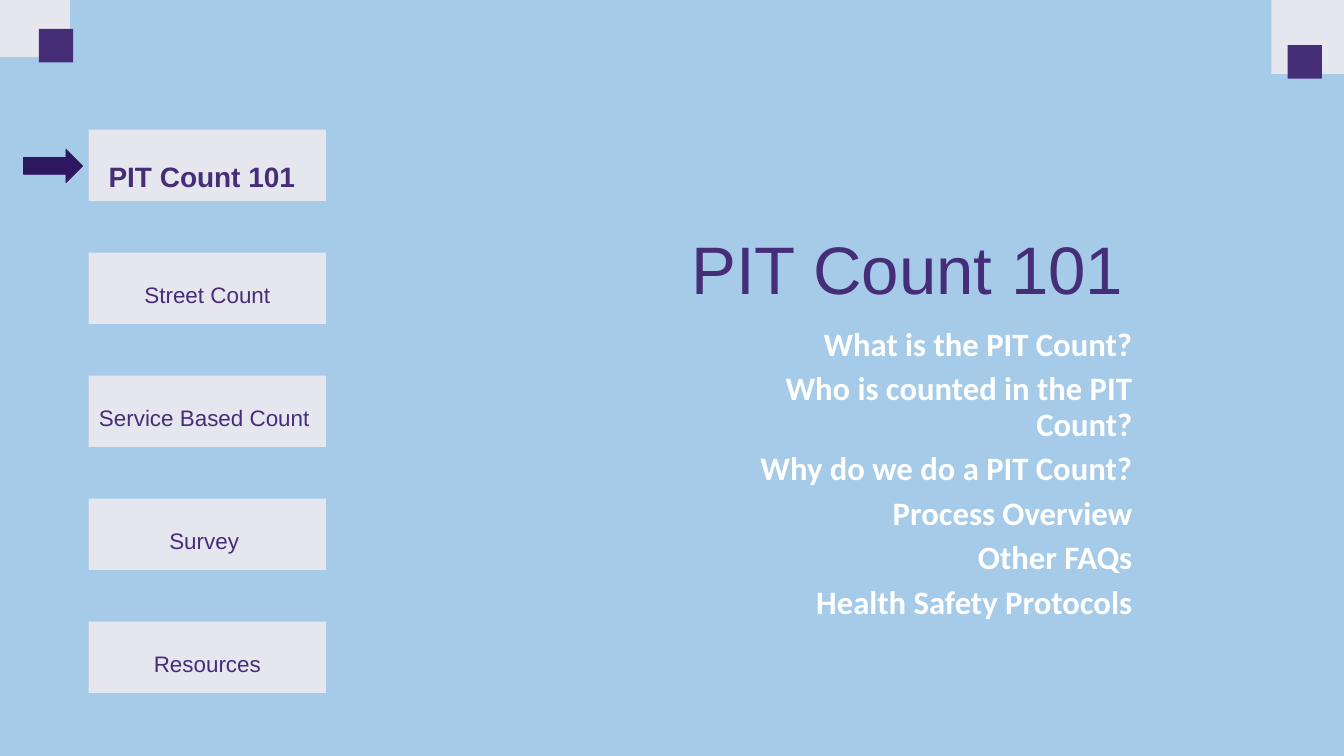
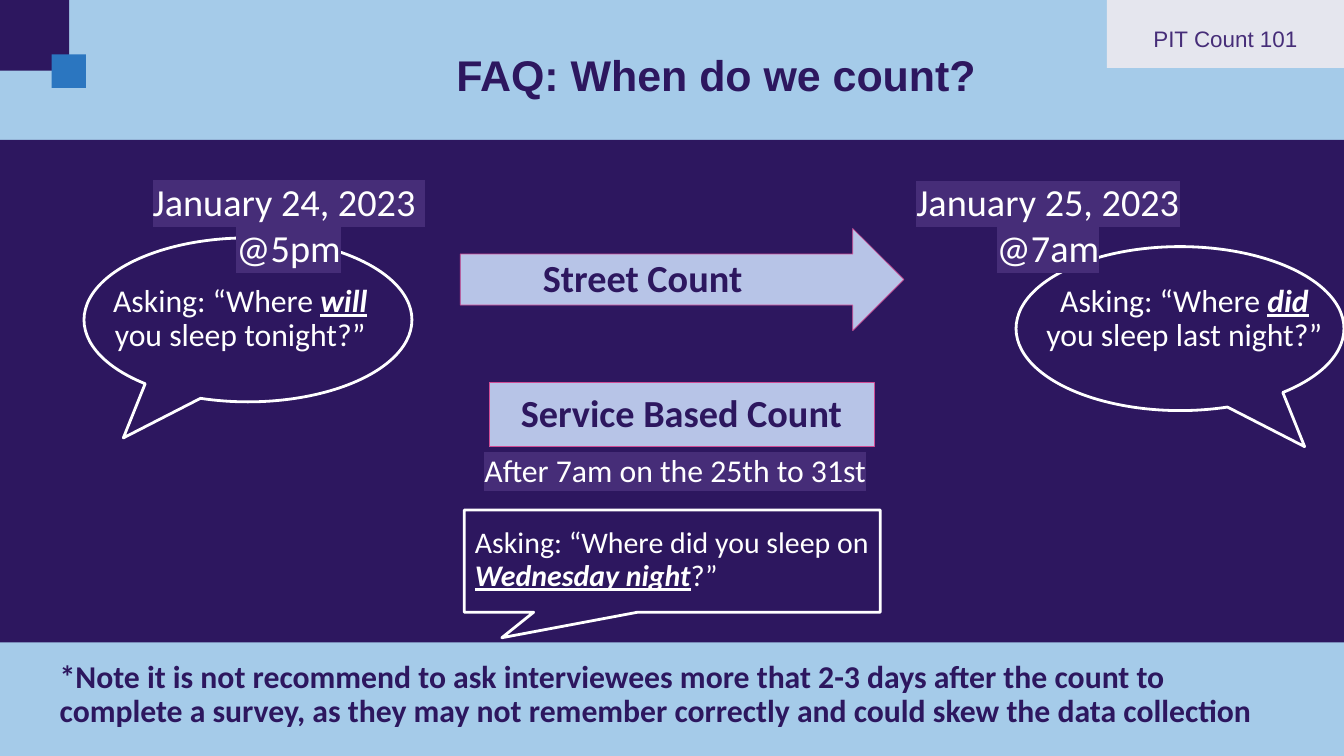
from dataclasses import dataclass

from lxml.etree import SubElement
from pptx import Presentation
from pptx.dml.color import RGBColor
from pptx.enum.shapes import MSO_SHAPE as Preset
from pptx.enum.text import MSO_ANCHOR as Anchor, MSO_AUTO_SIZE as AutoSize, PP_ALIGN as Align
from pptx.oxml.ns import qn
from pptx.util import Inches, Pt


@dataclass(frozen=True)
class Theme:
    sky: str = "A5CBE9"
    mist: str = "E5E6EE"
    violet: str = "462D78"
    indigo: str = "2D175F"
    blue: str = "2B76C0"
    lavender: str = "C9DAF8"
    pink: str = "D04D95"
    white: str = "FFFFFF"
    heading_font: str = "Arial"
    body_font: str = "Calibri"
    cover_size: int = 72
    title_size: int = 46
    date_size: int = 41
    agenda_size: int = 35
    body_size: int = 34
    small_body_size: int = 32
    active_size: int = 30
    label_size: int = 24
    lavender_opacity: int = 89


THEME = Theme()

# Grid of one-inch columns and rows
COLUMNS, ROWS = 20, 11.25
WIDTH, HEIGHT = Inches(COLUMNS), Inches(ROWS)

# Content. In a tuple of pieces every second piece is emphasised.
SECTIONS = ["PIT Count 101", "Street Count", "Service Based Count ", "Survey ", "Resources"]
ACTIVE = 0
AGENDA = [
    "What is the PIT Count?",
    "Who is counted in the PIT Count?",
    "Why do we do a PIT Count?",
    "Process Overview",
    "Other FAQs",
    "Health Safety Protocols",
]
FAQ_TITLE = "FAQ: When do we count?"
STREET_COUNT = "Street Count"
SERVICE_COUNT = "Service Based Count"
SERVICE_DATES = "After 7am on the 25th to 31st"
SERVICE_QUESTION = ("Asking: “Where did you sleep on ", "Wednesday night", "?”")
NOTE = ("*Note it is not recommend to ask interviewees more that 2-3 days after the count to "
        "complete a survey, as they may not remember correctly and could skew the data collection")
# Each evening: date lines and their place, question and its place, bubble corner, mirrored
STREET_TIMES = [
    (["January 25, 2023", "@7am"], (13.22, 2.56, 4.75, 1.58),
     ("Asking: “Where ", "did ", "you sleep last night?”"), 15.19, (15.12, 3.67), True),
    (["January 24, 2023 ", "@5pm"], (1.25, 2.55, 6.09, 1.58),
     ("Asking: “Where ", "will ", "you sleep tonight?”"), 1.14, (1.25, 3.54), False),
]

# Shared measures, in columns and rows
TAB_WIDTH, TAB_HEIGHT, LABEL_HEIGHT = 3.53, 1.06, 0.4
TAB_LEFT, TAB_TOP, TAB_STEP, LABEL_DROP = 1.32, 1.93, 1.83, 0.34
CORNER, ACCENT = (1.13, 1.1), (0.51, 0.5)
BUBBLE = (4.88, 2.44)
BAND_TOP, BAND_HEIGHT = 2.08, 7.48


def color(code):
    return RGBColor.from_string(code)


def place(left, top, width, height):
    """Turn grid columns and rows into slide lengths."""
    column, row = WIDTH / COLUMNS, HEIGHT / ROWS
    return [round(value) for value in (left * column, top * row, width * column, height * row)]


def add_preset(slide, preset, box, fill=None, line=None, line_width=0.75,
               opacity=None, adjustments=(), mirrored=False):
    shape = slide.shapes.add_shape(preset, *place(*box))
    shape.shadow.inherit = False
    if fill:
        shape.fill.solid()
        shape.fill.fore_color.rgb = color(fill)
    else:
        shape.fill.background()
    if opacity:
        fill_color = shape._element.spPr.find(qn("a:solidFill"))[0]
        SubElement(fill_color, qn("a:alpha")).set("val", str(opacity * 1000))
    if line:
        shape.line.color.rgb = color(line)
        shape.line.width = Pt(line_width)
    else:
        shape.line.fill.background()
    for index, value in enumerate(adjustments):
        shape.adjustments[index] = value
    if mirrored:
        shape._element.spPr.find(qn("a:xfrm")).set("flipH", "1")


def add_block(slide, box, fill):
    add_preset(slide, Preset.RECTANGLE, box, fill)


def format_run(run, font, size, ink, bold, highlight):
    run.font.name, run.font.size, run.font.bold = font, Pt(size), bold
    run.font.color.rgb = color(ink)
    if highlight:
        mark = SubElement(run._r.get_or_add_rPr(), qn("a:highlight"))
        SubElement(mark, qn("a:srgbClr")).set("val", highlight)
        run._r.rPr.find(qn("a:solidFill")).addnext(mark)


def add_text(slide, box, paragraphs, size, ink, font=THEME.body_font, bold=False,
             align=Align.LEFT, spacing=None, before=0, first_before=0, indent=0,
             insets=(0.1, 0.1), highlight=None, grow=True):
    frame = slide.shapes.add_textbox(*place(*box)).text_frame
    frame.word_wrap = True
    frame.vertical_anchor = Anchor.TOP
    frame.auto_size = AutoSize.SHAPE_TO_FIT_TEXT if grow else AutoSize.NONE
    frame.margin_left = frame.margin_right = Inches(insets[0])
    frame.margin_top = frame.margin_bottom = Inches(insets[1])
    for index, content in enumerate(paragraphs):
        paragraph = frame.add_paragraph() if index else frame.paragraphs[0]
        paragraph.alignment = align
        paragraph.space_before = Pt(before if index else first_before)
        if spacing:
            paragraph.line_spacing = spacing
        if indent:
            properties = paragraph._p.get_or_add_pPr()
            properties.set("marL", str(Inches(indent)))
            properties.set("indent", "0")
        pieces = (content,) if isinstance(content, str) else content
        paragraph.text = pieces[0]
        for piece in pieces[1:]:
            paragraph.add_run().text = piece
        for position, run in enumerate(paragraph.runs):
            emphasised = position % 2 == 1
            format_run(run, font, size, ink, bold or emphasised, highlight)
            if emphasised:
                run.font.italic = run.font.underline = True


def add_heading(slide, box, text, size, ink=THEME.violet, bold=False, align=Align.CENTER):
    add_text(slide, box, [text], size, ink, THEME.heading_font, bold, align,
             spacing=1.2, insets=(0, 0))


def add_remark(slide, box, content, size=THEME.body_size, ink=THEME.white, **options):
    add_text(slide, box, [content], size, ink, spacing=0.9, first_before=7.5,
             indent=0.12, **options)


def add_tab(slide, left, top, text, drop=LABEL_DROP, active=False):
    """Draw a section label on its pale block."""
    add_block(slide, (left, top, TAB_WIDTH, TAB_HEIGHT), THEME.mist)
    size = THEME.active_size if active else THEME.label_size
    shift = 0.08 if active else 0
    add_heading(slide, (left - shift, top + drop, TAB_WIDTH, LABEL_HEIGHT), text, size, bold=active)


def add_corner(slide, corner_at, accent_at, corner_fill, accent_fill):
    add_block(slide, (*corner_at, *CORNER), corner_fill)
    add_block(slide, (*accent_at, *ACCENT), accent_fill)


def add_slide(presentation):
    slide = presentation.slides.add_slide(presentation.slide_layouts[6])
    slide.background.fill.solid()
    slide.background.fill.fore_color.rgb = color(THEME.sky)
    return slide


def build_section_slide(presentation):
    slide = add_slide(presentation)
    add_corner(slide, (-0.09, -0.25), (0.58, 0.43), THEME.mist, THEME.violet)
    add_corner(slide, (18.92, 0), (19.16, 0.67), THEME.mist, THEME.violet)
    for index, section in enumerate(SECTIONS):
        add_tab(slide, TAB_LEFT, TAB_TOP + index * TAB_STEP, section, active=index == ACTIVE)
    add_preset(slide, Preset.RIGHT_ARROW, (0.35, 2.22 + ACTIVE * TAB_STEP, 0.88, 0.5),
               THEME.indigo, THEME.indigo)
    add_heading(slide, (7.51, 3.14, 11.99, 1.21), SECTIONS[ACTIVE], THEME.cover_size)
    add_text(slide, (10.17, 4.83, 6.78, 4.97), AGENDA, THEME.agenda_size, THEME.white, bold=True,
             align=Align.RIGHT, spacing=0.9, before=10, insets=(0.1, 0.05), grow=False)


def build_faq_slide(presentation):
    slide = add_slide(presentation)
    add_block(slide, (0, BAND_TOP, COLUMNS, BAND_HEIGHT), THEME.indigo)
    add_corner(slide, (-0.1, -0.05), (0.77, 0.81), THEME.indigo, THEME.blue)
    add_tab(slide, COLUMNS - TAB_WIDTH, -0.05, SECTIONS[ACTIVE])
    add_heading(slide, (6.79, 0.57, 7.83, 1.17), FAQ_TITLE, THEME.title_size, THEME.indigo,
                bold=True, align=Align.LEFT)

    counts = [
        (Preset.RIGHT_ARROW, (6.85, 3.4, 6.6, 1.52), STREET_COUNT, (7.53, 3.68, 4.07, 0.89)),
        (Preset.RECTANGLE, (7.28, 5.69, 5.73, 0.96), SERVICE_COUNT, (7.43, 5.69, 5.43, 0.89)),
    ]
    for preset, box, name, name_box in counts:
        add_preset(slide, preset, box, THEME.lavender, THEME.pink, opacity=THEME.lavender_opacity)
        add_text(slide, name_box, [name], THEME.date_size, THEME.indigo, bold=True,
                 align=Align.CENTER)

    add_remark(slide, (6.99, 6.67, 6.19, 0.72), SERVICE_DATES, highlight=THEME.violet)
    add_preset(slide, Preset.RECTANGULAR_CALLOUT, (6.91, 7.59, 6.19, 1.52), line=THEME.white,
               line_width=3, adjustments=(-0.41, 0.75))
    add_remark(slide, (6.85, 7.76, 6.6, 1.17), SERVICE_QUESTION, THEME.small_body_size)

    for dates, date_box, question, question_left, bubble_at, mirrored in STREET_TIMES:
        add_preset(slide, Preset.OVAL_CALLOUT, (*bubble_at, *BUBBLE), line=THEME.white,
                   line_width=3, adjustments=(-0.38, 0.72), mirrored=mirrored)
        add_remark(slide, (question_left, 4.14, 4.75, 1.23), question, align=Align.CENTER)
        add_text(slide, date_box, dates, THEME.date_size, THEME.white, align=Align.CENTER,
                 highlight=THEME.violet)

    add_remark(slide, (0.67, 9.74, 18.66, 1.23), NOTE, ink=THEME.indigo, bold=True)


def main():
    presentation = Presentation()
    presentation.slide_width, presentation.slide_height = WIDTH, HEIGHT
    build_section_slide(presentation)
    build_faq_slide(presentation)
    presentation.save("out.pptx")


if __name__ == "__main__":
    main()
